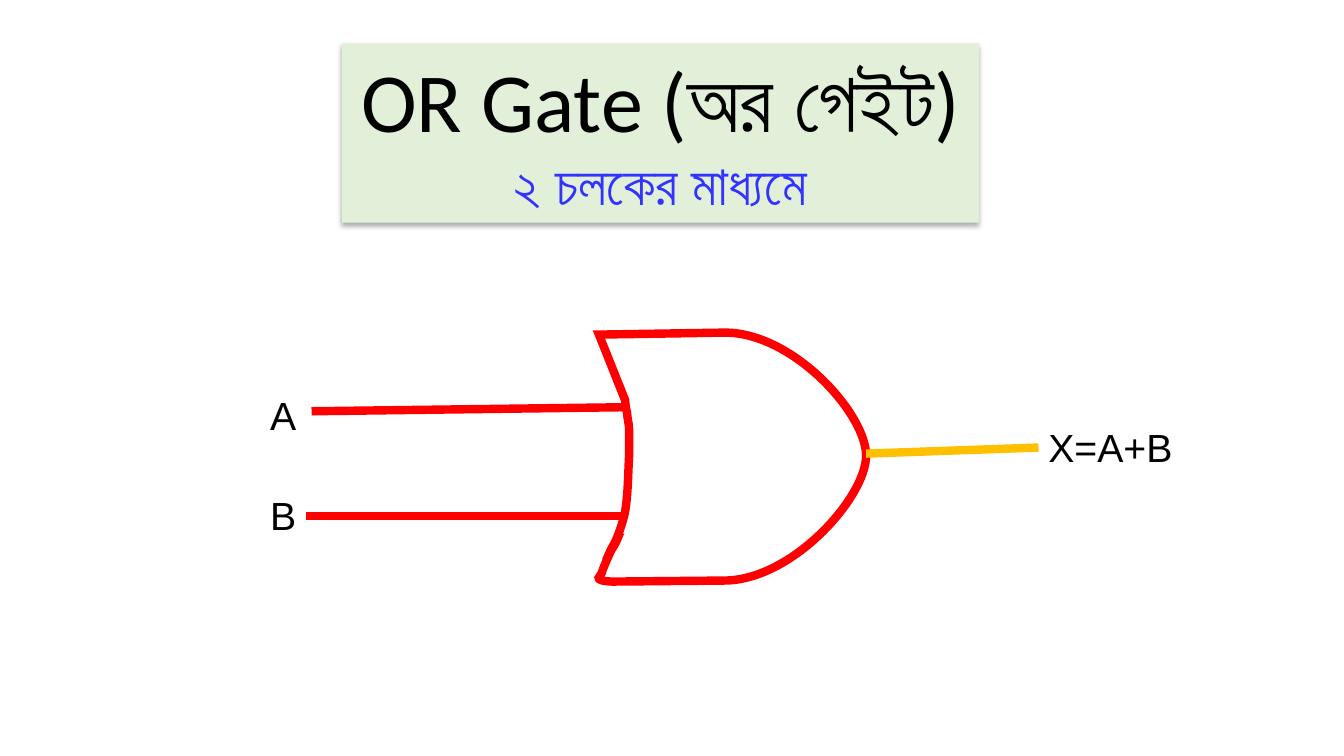
from lxml import etree
from pptx import Presentation
from pptx import util as u
from pptx.dml.color import RGBColor
from pptx.enum import shapes, text
from pptx.oxml import parse_xml
from pptx.oxml.ns import nsdecls, qn

PX = 9144  # EMU per px, 100 px to the inch
COLORS = {
    "panel": "E2F0D9",
    "ink": "000000",
    "subtitle": "3333FF",
    "gate": "FF0000",
    "output": "FFC000",
}
STROKE = u.Pt(6)

# Gate outline: one point ends a line, three points make a Bézier curve
GATE_START = (0, 2)
GATE_OUTLINE = [
    [(125, 0)],
    [(193, 0), (265, 81), (265, 122)],
    [(265, 163), (192, 246), (124, 246)],
    [(13, 247)],
    [(-9, 246), (3, 241), (3, 238)],
    [(3, 236), (14, 211), (17, 207)],
    [(20, 204), (8, 223), (12, 215)],
    [(17, 207), (21, 197), (25, 182)],
    [(29, 166), (29, 136), (30, 121)],
    [(30, 107), (30, 103), (30, 97)],
    [(30, 90), (28, 85), (28, 80)],
    [(28, 76), (27, 81), (26, 67)],
]


def color(name):
    return RGBColor.from_string(COLORS[name])


def style_text(para, font, size, ink):
    para.font.name = font
    para.font.size = u.Pt(size)
    para.font.color.rgb = color(ink)


def add_title(page, left, top, width, height):
    """Shaded title panel with a smaller second line."""
    title = page.shapes.title
    title.left, title.top = left * PX, top * PX
    title.width, title.height = width * PX, height * PX
    title.fill.solid()
    title.fill.fore_color.rgb = color("panel")
    title._element.spPr.append(parse_xml(
        f'<a:effectLst {nsdecls("a")}>'
        '<a:outerShdw blurRad="44450" dist="27940" dir="5400000" algn="ctr">'
        f'<a:srgbClr val="{COLORS["ink"]}"><a:alpha val="32000"/></a:srgbClr>'
        '</a:outerShdw></a:effectLst>'))
    frame = title.text_frame
    frame.word_wrap = True
    frame.auto_size = text.MSO_AUTO_SIZE.NONE
    frame.vertical_anchor = text.MSO_ANCHOR.TOP
    frame.text = "OR Gate (অর গেইট)\n২ চলকের মাধ্যমে"
    for para, size, ink in zip(frame.paragraphs, (60, 40), ("ink", "subtitle")):
        para.alignment = text.PP_ALIGN.CENTER
        para.line_spacing = 1.0
        para.space_before = u.Pt(0)
        style_text(para, "Calibri", size, ink)


def add_gate(page, left, top):
    """Outline of the OR gate, with its curved parts bent into Béziers."""
    builder = page.shapes.build_freeform(*GATE_START, scale=PX)
    builder.add_line_segments([part[-1] for part in GATE_OUTLINE], close=True)
    gate = builder.convert_to_shape(left * PX, top * PX)
    segments = list(gate._element.iter(qn("a:lnTo")))
    for segment, part in zip(segments, GATE_OUTLINE):
        if len(part) == 3:
            curve = etree.Element(qn("a:cubicBezTo"))
            for x, y in part:
                etree.SubElement(curve, qn("a:pt"), x=str(x), y=str(y))
            segment.getparent().replace(segment, curve)
    gate.shadow.inherit = False
    gate.fill.background()
    gate.line.color.rgb = color("gate")
    gate.line.width = STROKE
    line = gate._element.spPr.find(qn("a:ln"))
    etree.SubElement(line, qn("a:miter"), lim="800000")


def add_wire(page, start, end, ink):
    wire = page.shapes.add_connector(
        shapes.MSO_CONNECTOR.STRAIGHT, *(n * PX for n in start + end))
    wire.line.color.rgb = color(ink)
    wire.line.width = STROKE
    etree.SubElement(wire._element.spPr, qn("a:effectLst"))


def add_label(page, caption, left, top, width, height=57):
    box = page.shapes.add_textbox(left * PX, top * PX, width * PX, height * PX)
    box.text_frame.word_wrap = False
    box.text_frame.text = caption
    style_text(box.text_frame.paragraphs[0], "Arial", 28, "ink")


def add_diagram(page, left, top):
    """Gate with its wires and labels."""
    gate_left = left + 336
    add_gate(page, gate_left, top)
    # Inputs
    add_wire(page, (left + 46, top + 182), (gate_left + 25, top + 182), "gate")
    add_wire(page, (left + 51, top + 78), (gate_left + 26, top + 74), "gate")
    for row, name in enumerate("AB"):
        add_label(page, name, left, top + 53 + 100 * row, 46)
    # Output
    output_left = left + 772
    add_wire(page, (gate_left + 265, top + 120), (output_left, top + 114), "output")
    add_label(page, "X=A+B", output_left, top + 85, 144)


def main():
    deck = Presentation()
    deck.slide_width, deck.slide_height = 1333 * PX, 750 * PX
    page = deck.slides.add_slide(deck.slide_layouts.get_by_name("Title Only"))
    add_title(page, 339, 43, 632, 178)
    add_diagram(page, 258, 330)
    deck.save("out.pptx")


if __name__ == "__main__":
    main()
